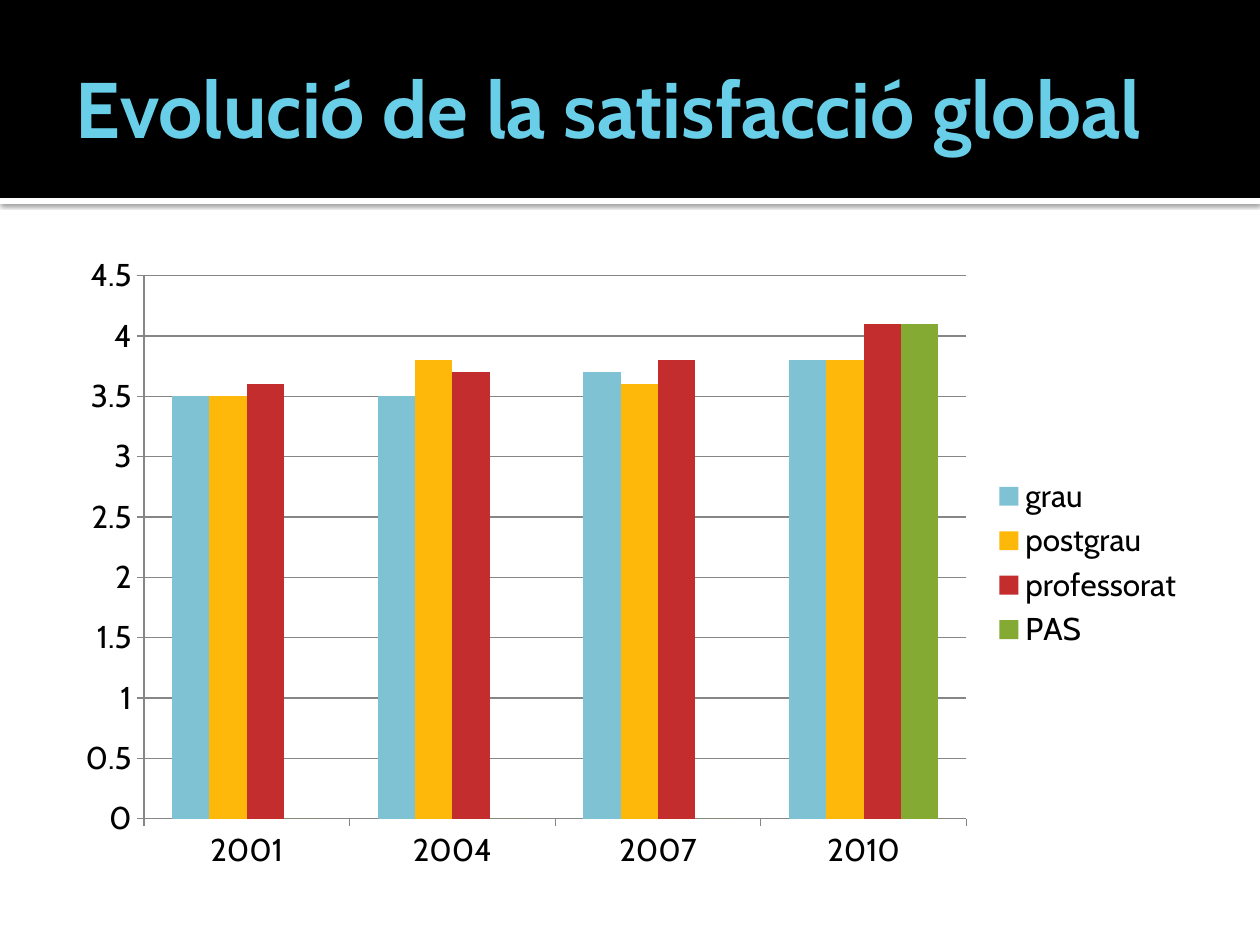
import dataclasses

import lxml.etree
import pptx
import pptx.chart.data
import pptx.dml.color
import pptx.enum.chart
import pptx.enum.shapes
import pptx.enum.text
import pptx.oxml
import pptx.oxml.ns
import pptx.util

PX_PER_INCH = 126


@dataclasses.dataclass(frozen=True)
class Theme:
    font: str = "Cabin"
    title_size: int = 45
    chart_size: int = 18
    title: str = "69CFE8"
    text: str = "000000"
    axis: str = "868686"
    header: str = "000000"
    strip: str = "FFFFFF"


@dataclasses.dataclass(frozen=True)
class Box:
    left: int
    top: int
    width: int
    height: int

    def emu(self) -> tuple[int, ...]:
        return tuple(px(length) for length in dataclasses.astuple(self))


@dataclasses.dataclass(frozen=True)
class Band:
    box: Box
    color: str
    casts_shadow: bool = False


@dataclasses.dataclass(frozen=True)
class Group:
    name: str
    scores: tuple[float, ...]
    color: str


THEME = Theme()
TITLE = "Evolució de la satisfacció global"
TITLE_BOX = Box(63, 21, 1134, 173)
CHART_BOX = Box(63, 244, 1134, 638)
BANDS = (
    Band(Box(0, 198, 1260, 6), THEME.strip, casts_shadow=True),
    Band(Box(0, 0, 1260, 198), THEME.header),
)
YEARS = ("2001", "2004", "2007", "2010")
GROUPS = (
    Group("grau", (3.5, 3.5, 3.7, 3.8), "7EC2D3"),
    Group("postgrau", (3.5, 3.8, 3.6, 3.8), "FEB80A"),
    Group("professorat", (3.6, 3.7, 3.8, 4.1), "C32D2E"),
    Group("PAS", (0, 0, 0, 4.1), "84AA33"),
)


def px(length: int) -> int:
    return pptx.util.Inches(length / PX_PER_INCH)


def rgb(color: str) -> pptx.dml.color.RGBColor:
    return pptx.dml.color.RGBColor.from_string(color)


def style_font(font, size: int, color: str, bold: bool = False) -> None:
    font.name = THEME.font
    font.size = pptx.util.Pt(size)
    font.bold = bold
    font.color.rgb = rgb(color)


def add_drop_shadow(shape) -> None:
    """Put a soft shadow straight below the shape."""
    effects = shape.element.spPr.find(pptx.oxml.ns.qn("a:effectLst"))
    shadow = lxml.etree.SubElement(
        effects,
        pptx.oxml.ns.qn("a:outerShdw"),
        blurRad=str(pptx.util.Pt(2.5)),
        dist=str(pptx.util.Pt(0.8)),
        dir="5400000",
        algn="tl",
        rotWithShape="0",
    )
    color = lxml.etree.SubElement(shadow, pptx.oxml.ns.qn("a:srgbClr"), val="000000")
    lxml.etree.SubElement(color, pptx.oxml.ns.qn("a:alpha"), val="60000")


def draw_band(slide, band: Band) -> None:
    shape = slide.shapes.add_shape(
        pptx.enum.shapes.MSO_SHAPE.RECTANGLE, *band.box.emu()
    )
    shape.fill.solid()
    shape.fill.fore_color.rgb = rgb(band.color)
    shape.line.fill.background()
    shape.shadow.inherit = False
    if band.casts_shadow:
        add_drop_shadow(shape)


def draw_title(slide) -> None:
    title = slide.shapes.title
    # The placeholder comes first in the tree; bring it in front of the bands.
    title.element.getparent().append(title.element)
    title.left, title.top, title.width, title.height = TITLE_BOX.emu()
    frame = title.text_frame
    frame.text = TITLE
    frame.word_wrap = True
    frame.auto_size = pptx.enum.text.MSO_AUTO_SIZE.NONE
    frame.vertical_anchor = pptx.enum.text.MSO_ANCHOR.MIDDLE
    frame.margin_left = pptx.util.Inches(0.1)
    frame.margin_top = frame.margin_right = frame.margin_bottom = pptx.util.Inches(0.05)
    paragraph = frame.paragraphs[0]
    paragraph.alignment = pptx.enum.text.PP_ALIGN.LEFT
    style_font(paragraph.runs[0].font, THEME.title_size, THEME.title, bold=True)


def style_line(line) -> None:
    line.color.rgb = rgb(THEME.axis)
    line.width = pptx.util.Pt(0.75)


def draw_chart(slide) -> None:
    scores = pptx.chart.data.CategoryChartData(number_format="General")
    scores.categories = YEARS
    for group in GROUPS:
        scores.add_series(group.name, group.scores)
    chart = slide.shapes.add_chart(
        pptx.enum.chart.XL_CHART_TYPE.COLUMN_CLUSTERED, *CHART_BOX.emu(), scores
    ).chart
    chart.has_title = False
    style_font(chart.font, THEME.chart_size, THEME.text)

    columns = chart.plots[0]
    columns.vary_by_categories = False
    columns.gap_width = 150
    columns.overlap = 0
    for series, group in zip(columns.series, GROUPS):
        series.format.fill.solid()
        series.format.fill.fore_color.rgb = rgb(group.color)

    for axis in (chart.category_axis, chart.value_axis):
        axis.major_tick_mark = pptx.enum.chart.XL_TICK_MARK.OUTSIDE
        axis.minor_tick_mark = pptx.enum.chart.XL_TICK_MARK.NONE
        style_line(axis.format.line)
    chart.value_axis.minimum_scale = 0
    chart.value_axis.maximum_scale = 4.5
    chart.value_axis.major_unit = 0.5
    chart.value_axis.has_major_gridlines = True
    style_line(chart.value_axis.major_gridlines.format.line)

    chart.has_legend = True
    chart.legend.position = pptx.enum.chart.XL_LEGEND_POSITION.RIGHT
    chart.legend.include_in_layout = False


def main() -> None:
    deck = pptx.Presentation()
    deck.slide_width, deck.slide_height = px(1260), px(945)
    slide = deck.slides.add_slide(deck.slide_layouts.get_by_name("Title Only"))
    for band in BANDS:
        draw_band(slide, band)
    draw_title(slide)
    draw_chart(slide)
    deck.save("out.pptx")


if __name__ == "__main__":
    main()
